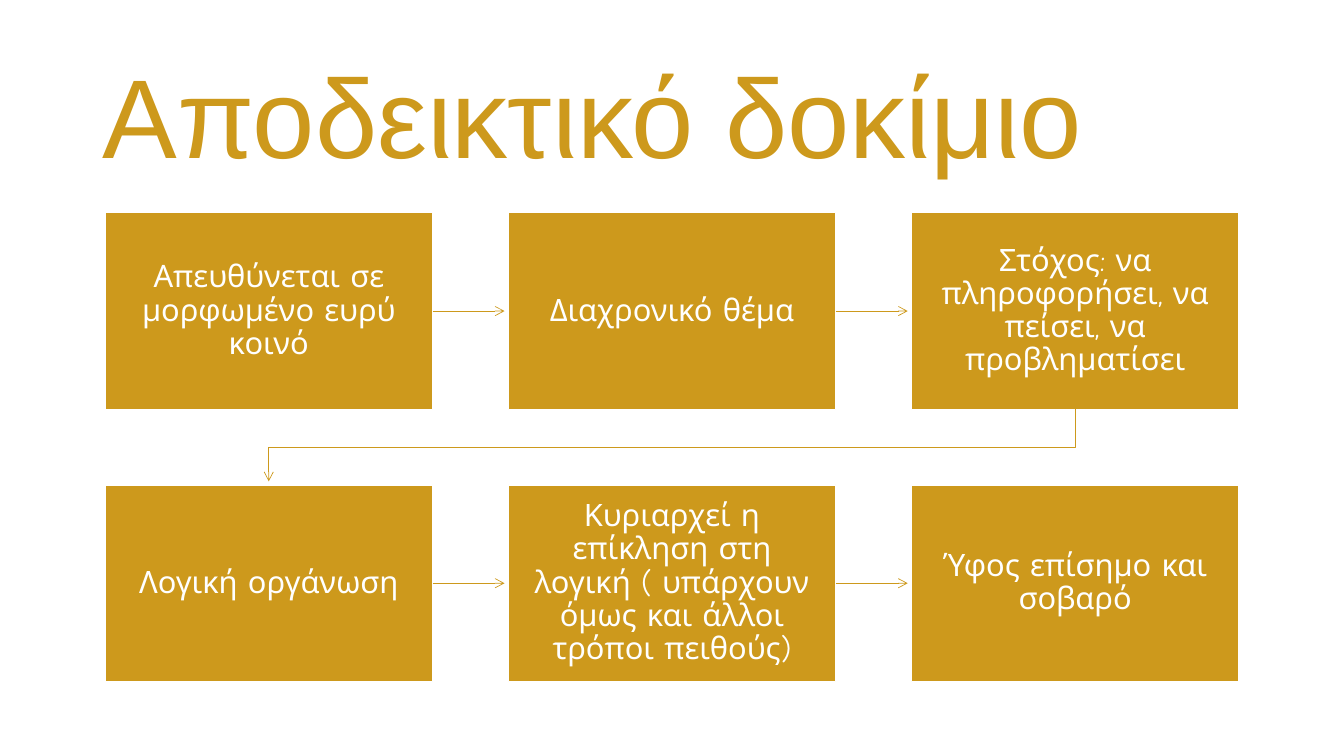
from lxml.etree import SubElement
from pptx import Presentation
from pptx.dml.color import RGBColor
from pptx.enum.shapes import MSO_CONNECTOR as Connector, MSO_SHAPE as Shape
from pptx.enum.text import MSO_ANCHOR as Anchor, MSO_AUTO_SIZE as AutoSize, PP_ALIGN as Align
from pptx.oxml.ns import qn
from pptx.util import Pt

GOLD = "CD991C"
WHITE = "FFFFFF"
COLUMNS = 3
LEFT, TOP = 75, 152
BOX_WIDTH, BOX_HEIGHT = 234, 140.4
COLUMN_PITCH, ROW_PITCH = 288, 194.4
ARROW_GAP = 2.6

STEPS = [
    "Απευθύνεται σε μορφωμένο ευρύ κοινό",
    "Διαχρονικό θέμα",
    "Στόχος: να πληροφορήσει, να πείσει, να προβληματίσει",
    "Λογική οργάνωση",
    "Κυριαρχεί η επίκληση στη λογική ( υπάρχουν όμως και άλλοι τρόποι πειθούς)",
    "Ύφος επίσημο και σοβαρό",
]


def color(value):
    return RGBColor.from_string(value)


def add_text(frame, text, size, font, fill, align):
    frame.word_wrap = True
    frame.auto_size = AutoSize.NONE
    frame.vertical_anchor = Anchor.MIDDLE
    paragraph = frame.paragraphs[0]
    paragraph.alignment = align
    run = paragraph.add_run()
    run.text = text
    run.font.size = Pt(size)
    run.font.name = font
    run.font.color.rgb = color(fill)
    return paragraph


def add_title(slide, text):
    title = slide.shapes.title
    title.left, title.top, title.width, title.height = Pt(66), Pt(28.8), Pt(828), Pt(104.4)
    add_text(title.text_frame, text, 80, "Arial", GOLD, Align.LEFT)


def box_position(index):
    row, column = divmod(index, COLUMNS)
    return LEFT + column * COLUMN_PITCH, TOP + row * ROW_PITCH


def add_step(slide, index, text):
    left, top = box_position(index)
    box = slide.shapes.add_shape(Shape.RECTANGLE, Pt(left), Pt(top), Pt(BOX_WIDTH), Pt(BOX_HEIGHT))
    box.shadow.inherit = False
    box.fill.solid()
    box.fill.fore_color.rgb = color(GOLD)
    box.line.color.rgb = color(WHITE)
    box.line.width = Pt(1)
    frame = box.text_frame
    frame.margin_left = frame.margin_right = Pt(11.5)
    frame.margin_top = frame.margin_bottom = Pt(12)
    paragraph = add_text(frame, text, 22, "Comic Neue", WHITE, Align.CENTER)
    paragraph.line_spacing = 0.9


def style_arrow(arrow):
    arrow.line.color.rgb = color(GOLD)
    arrow.line.width = Pt(0.5)
    SubElement(arrow.line._get_or_add_ln(), qn("a:tailEnd"), type="arrow")


def add_row_arrow(slide, index):
    left, top = box_position(index)
    start = left + BOX_WIDTH
    end = left + COLUMN_PITCH - ARROW_GAP
    middle = top + BOX_HEIGHT / 2
    arrow = slide.shapes.add_connector(Connector.STRAIGHT, Pt(start), Pt(middle), Pt(end), Pt(middle))
    style_arrow(arrow)
    SubElement(arrow._element.spPr, qn("a:effectLst"))


def add_return_arrow(slide, index):
    left, top = box_position(index)
    next_left, next_top = box_position(index + 1)
    start_x, end_x = left + BOX_WIDTH / 2, next_left + BOX_WIDTH / 2
    start_y = top + BOX_HEIGHT
    turn_y = (start_y + next_top) / 2
    builder = slide.shapes.build_freeform(Pt(start_x), Pt(start_y))
    corners = [(start_x, turn_y), (end_x, turn_y), (end_x, next_top - ARROW_GAP)]
    builder.add_line_segments([(Pt(x), Pt(y)) for x, y in corners], close=False)
    arrow = builder.convert_to_shape()
    arrow.fill.background()
    style_arrow(arrow)
    arrow.shadow.inherit = False


def main():
    presentation = Presentation()
    presentation.slide_width, presentation.slide_height = Pt(960), Pt(540)
    slide = presentation.slides.add_slide(presentation.slide_layouts[5])
    slide.background.fill.solid()
    slide.background.fill.fore_color.rgb = color(WHITE)
    add_title(slide, "Αποδεικτικό δοκίμιο")
    for index, text in enumerate(STEPS):
        add_step(slide, index, text)
        if (index + 1) % COLUMNS:
            add_row_arrow(slide, index)
        elif index + 1 < len(STEPS):
            add_return_arrow(slide, index)
    presentation.save("out.pptx")


if __name__ == "__main__":
    main()
